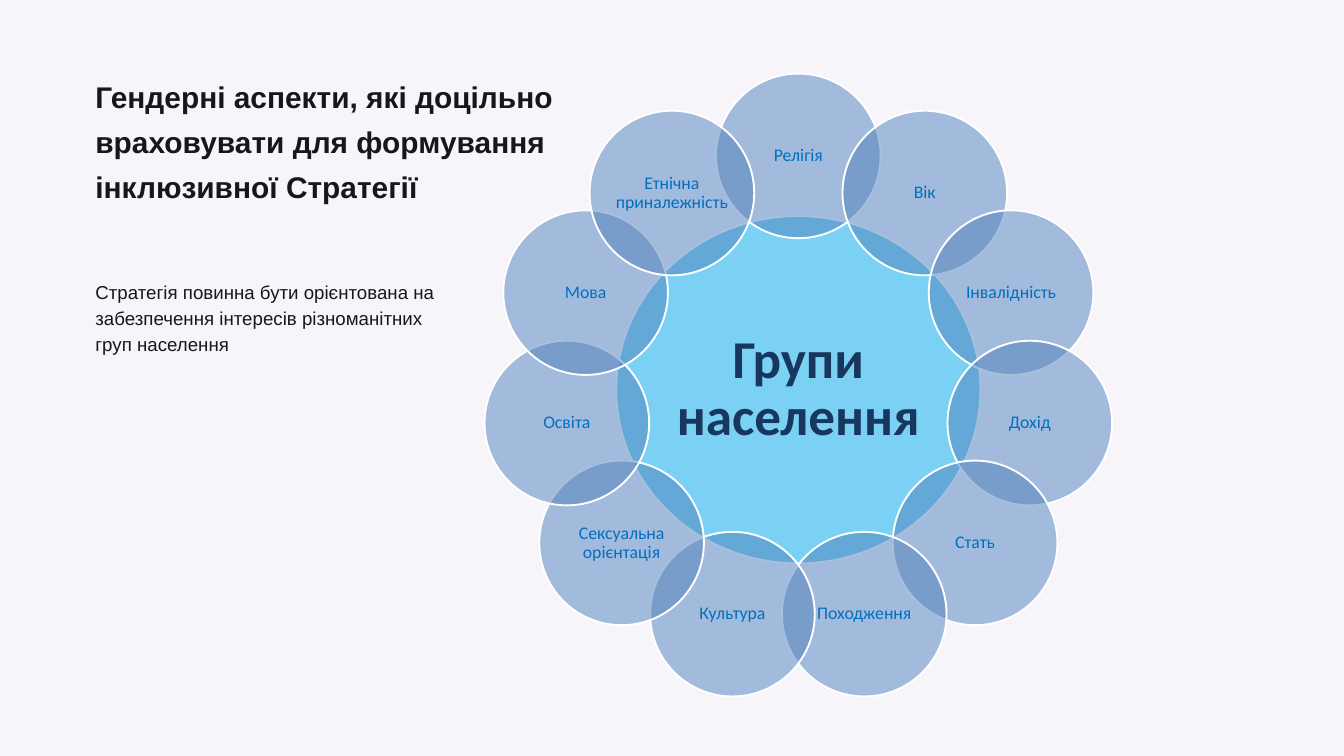
import math
from dataclasses import dataclass

from lxml import etree
from pptx import Presentation
from pptx import util as u
from pptx.dml.color import RGBColor
from pptx.enum import shapes, text
from pptx.oxml.ns import qn


@dataclass(frozen=True)
class Theme:
    background: str = "F7F4FA"
    ink: str = "17161C"
    hub: str = "00B0F0"
    hub_text: str = "17375E"
    petal: str = "4F81BD"
    petal_text: str = "0070C0"
    outline: str = "FFFFFF"
    copy_font: str = "Arial"
    diagram_font: str = "Calibri"
    title_size: int = 32
    body_size: int = 20
    hub_size: int = 57
    petal_size: int = 19


THEME = Theme()
WIDTH, HEIGHT = 20, 11.25
LEFT_MARGIN = 0.071 * WIDTH
CENTER_X, CENTER_Y = 11.88, 5.8
RING_RADIUS = 3.48
PETAL_DIAMETER = 2.45
HUB_WIDTH, HUB_HEIGHT = 5.42, 5.17

TITLE = "Гендерні аспекти, які доцільно враховувати для формування інклюзивної Стратегії"
SUMMARY = ("Стратегія повинна бути орієнтована на забезпечення інтересів "
           "різноманітних груп населення")
HUB_LABEL = "Групи населення"
# Clockwise from the top
GROUPS = ["Релігія", "Вік", "Інвалідність", "Дохід", "Стать", "Походження",
          "Культура", "Сексуальна орієнтація", "Освіта", "Мова",
          "Етнічна приналежність"]


def write(holder, words, *, size, color, font, bold=False, spacing=None,
          align=text.PP_ALIGN.LEFT, anchor=text.MSO_ANCHOR.TOP, inset=0):
    frame = holder.text_frame
    frame.word_wrap = True
    frame.vertical_anchor = anchor
    frame.margin_left = frame.margin_right = u.Inches(inset)
    frame.margin_top = frame.margin_bottom = u.Inches(inset)
    paragraph = frame.paragraphs[0]
    paragraph.alignment = align
    paragraph.line_spacing = spacing
    run = paragraph.add_run()
    run.text = words
    run.font.size = u.Pt(size)
    run.font.name = font
    run.font.bold = bold
    run.font.color.rgb = RGBColor.from_string(color)


def add_copy(slide, words, top, width, height, **style):
    box = slide.shapes.add_textbox(*map(u.Inches, (LEFT_MARGIN, top, width, height)))
    write(box, words, color=THEME.ink, font=THEME.copy_font, **style)
    box.text_frame.auto_size = text.MSO_AUTO_SIZE.SHAPE_TO_FIT_TEXT


def add_bubble(diagram, words, center_x, center_y, width, height, fill, **style):
    """Add a half-transparent ellipse with a centred label."""
    bubble = diagram.shapes.add_shape(
        shapes.MSO_SHAPE.OVAL,
        *map(u.Inches, (center_x - width / 2, center_y - height / 2, width, height)))
    bubble.shadow.inherit = False
    bubble.fill.solid()
    bubble.fill.fore_color.rgb = RGBColor.from_string(fill)
    color = bubble.fill._xPr.find(qn("a:solidFill"))[0]
    etree.SubElement(color, qn("a:alpha"), val="50000")
    bubble.line.color.rgb = RGBColor.from_string(THEME.outline)
    bubble.line.width = u.Pt(2)
    write(bubble, words, font=THEME.diagram_font, spacing=0.9,
          align=text.PP_ALIGN.CENTER, anchor=text.MSO_ANCHOR.MIDDLE, **style)


def add_flower(slide):
    """Add the hub and a ring of evenly spaced petals."""
    diagram = slide.shapes.add_group_shape()
    add_bubble(diagram, HUB_LABEL, CENTER_X, CENTER_Y, HUB_WIDTH, HUB_HEIGHT,
               THEME.hub, size=THEME.hub_size, color=THEME.hub_text,
               bold=True, inset=0.08)
    for index, group in enumerate(GROUPS):
        angle = math.tau * index / len(GROUPS)
        add_bubble(diagram, group,
                   CENTER_X + RING_RADIUS * math.sin(angle),
                   CENTER_Y - RING_RADIUS * math.cos(angle),
                   PETAL_DIAMETER, PETAL_DIAMETER, THEME.petal,
                   size=THEME.petal_size, color=THEME.petal_text, inset=0.03)


def main():
    deck = Presentation()
    deck.slide_width, deck.slide_height = u.Inches(WIDTH), u.Inches(HEIGHT)
    slide = deck.slides.add_slide(deck.slide_layouts[6])
    slide.background.fill.solid()
    slide.background.fill.fore_color.rgb = RGBColor.from_string(THEME.background)

    add_copy(slide, TITLE, 1.04, 7, 1.95, size=THEME.title_size,
             bold=True, spacing=u.Pt(48))
    add_flower(slide)
    add_copy(slide, SUMMARY, 4.12, 5.42, 1.14, size=THEME.body_size,
             spacing=u.Pt(28))
    deck.save("out.pptx")


if __name__ == "__main__":
    main()
